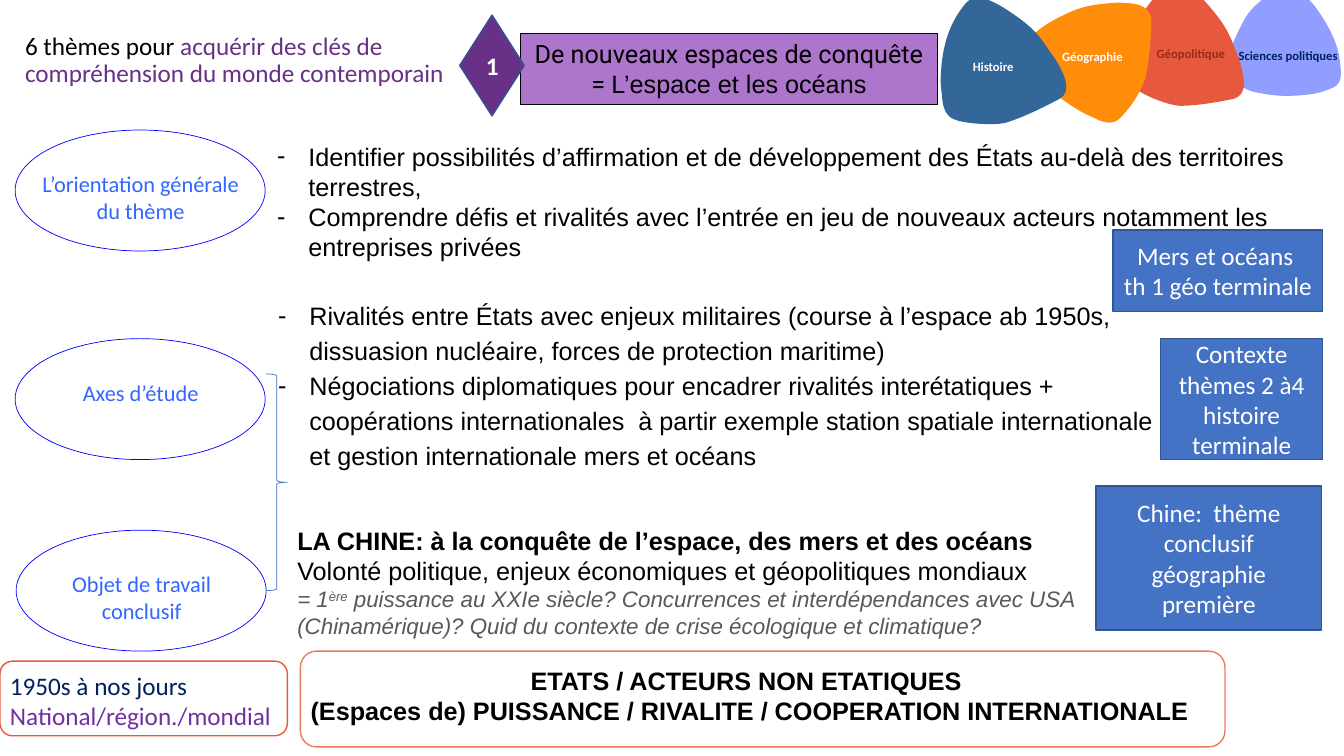
from math import dist

from lxml import etree
from pptx import Presentation
from pptx.dml.color import RGBColor
from pptx.enum import shapes, text
from pptx.oxml import ns
from pptx.util import Inches, Pt

HUES = {
    "black": "000000", "white": "FFFFFF", "gray": "595959", "navy": "002060",
    "plum": "683086", "violet": "7030A0", "mauve": "AE75CD", "lilac": "919DFF",
    "red": "E7593F", "brick": "992918", "coral": "E87C58", "orange": "FF8D09",
    "teal": "336699", "blue": "4472C4", "edge": "325491",
    "pure": "0000FF", "sky": "3366FF",
}

# Subject petals: label, fill, label colour, label box, outline points
PETALS = [
    ("Sciences politiques", "lilac", "navy", (12.22, 0.45, 1.11, 0.11), [
        (13.3, 0.73), (13.28, 0.82), (13.22, 0.87), (13.03, 0.93), (12.71, 0.95),
        (12.43, 0.91), (12.31, 0.86), (12.2, 0.8), (12.14, 0.73), (12.14, 0.65),
        (12.35, 0.18), (12.49, 0.02), (12.67, -0.11), (12.77, -0.14),
        (12.85, -0.11), (12.95, -0.03), (13.04, 0.06), (13.18, 0.28), (13.27, 0.5)]),
    ("Géopolitique", "red", "brick", (11.32, 0.43, 0.98, 0.19), [
        (11.6, -0.16), (11.68, -0.19), (11.76, -0.16), (11.93, -0.01),
        (12.15, 0.27), (12.28, 0.56), (12.32, 0.7), (12.34, 0.84), (12.31, 0.93),
        (12.24, 0.98), (11.73, 1.05), (11.5, 1), (11.29, 0.9), (11.2, 0.82),
        (11.18, 0.73), (11.18, 0.59), (11.21, 0.46), (11.3, 0.2), (11.43, 0)]),
    ("Géographie", "orange", "white", (10.35, 0.46, 0.97, 0.19), [
        (10.19, 0.52), (10.18, 0.43), (10.23, 0.36), (10.4, 0.23), (10.72, 0.08),
        (11.02, 0.03), (11.17, 0.03), (11.3, 0.05), (11.38, 0.1), (11.42, 0.19),
        (11.37, 0.73), (11.28, 0.95), (11.14, 1.14), (11.05, 1.21),
        (10.95, 1.21), (10.83, 1.16), (10.71, 1.1), (10.48, 0.94), (10.31, 0.75)]),
    ("Histoire", "teal", "white", (9.26, 0.55, 1.18, 0.22), [
        (9.58, 0.03), (9.66, -0.02), (9.75, -0.02), (9.96, 0.08), (10.25, 0.3),
        (10.44, 0.55), (10.52, 0.68), (10.57, 0.81), (10.57, 0.91), (10.51, 0.98),
        (10, 1.21), (9.76, 1.23), (9.51, 1.2), (9.41, 1.15), (9.36, 1.06),
        (9.34, 0.92), (9.33, 0.78), (9.36, 0.5), (9.44, 0.25)]),
]

# A paragraph is a list of runs; a run is its text and what differs from the base font
TITLE = [[("6 thèmes pour ", {}),
          ("acquérir des clés de compréhension du monde contemporain", {"hue": "plum"})]]
GOALS = [
    "Identifier possibilités d’affirmation et de développement des États "
    "au-delà des territoires terrestres,",
    "Comprendre défis et rivalités avec l’entrée en jeu de nouveaux acteurs "
    "notamment les entreprises privées"]
AXES = [
    "Rivalités entre États avec enjeux militaires (course à l’espace ab 1950s, "
    "dissuasion nucléaire, forces de protection maritime)",
    "Négociations diplomatiques pour encadrer rivalités interétatiques + "
    "coopérations internationales  à partir exemple station spatiale "
    "internationale et gestion internationale mers et océans"]
THEME = [[("De nouveaux espaces de conquête", {"face": "Roboto"})],
         [("= ", {"face": "Roboto"}), ("L’espace et les océans", {})]]
NOTE = {"size": 16, "hue": "gray", "italic": True}
CHINA = [
    [("LA CHINE: à la conquête de l’espace, des mers et des océans", {"bold": True})],
    "Volonté politique, enjeux économiques et géopolitiques mondiaux",
    [("= 1", NOTE), ("ère", {**NOTE, "sup": True}),
     (" puissance au XXIe siècle? Concurrences et interdépendances avec USA "
      "(Chinamérique)? Quid du contexte de crise écologique et climatique?", NOTE)]]
ACTORS = ["ETATS / ACTEURS NON ETATIQUES ",
          "(Espaces de) PUISSANCE / RIVALITE / COOPERATION INTERNATIONALE"]
SCOPE = ["1950s à nos jours", [("National/région./mondial", {"hue": "violet"})]]

# Ovals: left, top, label, label height
OVALS = [(0.15, 1.29, "L’orientation générale du thème", 0.64),
         (0.15, 3.36, "Axes d’étude", 0.37),
         (0.16, 5.26, "Objet de travail conclusif", 0.64)]
LINKS = [((10.87, 4.82, 2.24, 1.43), ["Chine:  thème conclusif géographie première"]),
         ((11.04, 2.28, 2.08, 0.81), ["Mers et océans ", "th 1 géo terminale"]),
         ((11.51, 3.36, 1.61, 1.2), ["Contexte thèmes 2 à4 histoire terminale"])]

KIND = shapes.MSO_SHAPE
MID = text.MSO_ANCHOR.MIDDLE

deck = Presentation()
deck.slide_width, deck.slide_height = Inches(13.33), Inches(7.5)
slide = deck.slides.add_slide(deck.slide_layouts[6])


def rgb(hue):
    return RGBColor.from_string(HUES[hue])


def style(font, size, hue, face, bold=False, italic=False, sup=False):
    font.size, font.name = Pt(size), face
    font.bold, font.italic = bold, italic
    font.color.rgb = rgb(hue)


def write(shape, paras, size=18, hue="black", face="Calibri", bold=False,
          center=False, anchor=text.MSO_ANCHOR.TOP, space=None, dash=False, inset=None):
    """Fill a shape with paragraphs, each a string or a list of runs."""
    frame = shape.text_frame
    frame.word_wrap, frame.vertical_anchor = True, anchor
    if inset is not None:
        frame.margin_left = frame.margin_right = Inches(inset)
        frame.margin_top = frame.margin_bottom = Inches(inset)
    base = {"size": size, "hue": hue, "face": face, "bold": bold}
    for i, para in enumerate(paras):
        p = frame.paragraphs[0] if i == 0 else frame.add_paragraph()
        p.alignment = text.PP_ALIGN.CENTER if center else text.PP_ALIGN.LEFT
        if space:
            p.line_spacing = space
        if dash:
            props = p._p.get_or_add_pPr()
            props.set("marL", str(Inches(0.31)))
            props.set("indent", str(Inches(-0.31)))
            etree.SubElement(props, ns.qn("a:buFont")).set("typeface", face)
            etree.SubElement(props, ns.qn("a:buChar")).set("char", "-")
        runs = [(para, {})] if isinstance(para, str) else para
        alike = all(extra == runs[0][1] for _, extra in runs)
        if alike:
            style(p.font, **{**base, **runs[0][1]})
        for words, extra in runs:
            run = p.add_run()
            run.text = words
            if not alike:
                style(run.font, **{**base, **extra})
            if extra.get("sup"):
                run._r.get_or_add_rPr().set("baseline", "30000")


def label(box, paras, **look):
    write(slide.shapes.add_textbox(*map(Inches, box)), paras, **look)


def paint(shape, fill=None, line=None, width=1):
    shape.shadow.inherit = False
    if fill:
        shape.fill.solid()
        shape.fill.fore_color.rgb = rgb(fill)
    else:
        shape.fill.background()
    if line:
        shape.line.color.rgb = rgb(line)
        shape.line.width = Pt(width)
    else:
        shape.line.fill.background()
    return shape


def draw(kind, box, **look):
    return paint(slide.shapes.add_shape(kind, *map(Inches, box)), **look)


def bend(shape):
    """Turn the straight sides of a closed outline into smooth cubic curves."""
    tree = shape._element
    dots = [(int(pt.get("x")), int(pt.get("y"))) for pt in tree.iter(ns.qn("a:pt"))][:-1]
    for i, side in enumerate(list(tree.iter(ns.qn("a:lnTo")))):
        a, b, c, d = [dots[(i + k) % len(dots)] for k in (-1, 0, 1, 2)]
        reach = dist(b, c) / 3
        out, back = reach / dist(a, c), reach / dist(b, d)
        grips = [[q + (r - p) * out for p, q, r in zip(a, b, c)],
                 [r - (s - q) * back for q, r, s in zip(b, c, d)], c]
        arc = etree.Element(ns.qn("a:cubicBezTo"))
        for x, y in grips:
            etree.SubElement(arc, ns.qn("a:pt"), x=str(round(x)), y=str(round(y)))
        side.getparent().replace(side, arc)


label((0.15, 0.11, 4.56, 0.99), TITLE, anchor=MID, space=0.9)

for name, fill, ink, box, dots in PETALS:
    first, *rest = [(Inches(x), Inches(y)) for x, y in dots]
    pen = slide.shapes.build_freeform(*first)
    pen.add_line_segments(rest + [first], close=True)
    petal = paint(pen.convert_to_shape(), fill=fill)
    bend(petal)
    label(box, [name], size=9, hue=ink, bold=True, center=True, inset=0.03)

label((2.65, 1.35, 10.28, 1.31), GOALS, face="Arial", dash=True)
label((2.66, 2.89, 9.01, 1.84), AXES, face="Arial", dash=True, space=1.15)

for left, top, name, high in OVALS:
    draw(KIND.OVAL, (left, top, 2.48, 1.2), line="pure", width=0.5)
    label((left + 0.09, top + 0.35, 2.31, high), [name], size=16, hue="sky", center=True)
draw(KIND.RIGHT_BRACE, (2.64, 3.71, 0.21, 2.15), line="blue", width=0.5)

banner = draw(KIND.RECTANGLE, (5.16, 0.33, 4.14, 0.71), fill="mauve", line="black", width=0.75)
write(banner, THEME, face="Arial", center=True)
label((2.85, 5.16, 8.49, 1.55), CHINA, face="Arial")
label((2.79, 6.55, 9.29, 0.71), ACTORS, face="Arial", bold=True, center=True)
label((0, 6.6, 2.85, 0.71), SCOPE, hue="navy")

badge = draw(KIND.DIAMOND, (4.56, 0.15, 0.64, 1), fill="plum", line="edge")
write(badge, ["1"], hue="white", bold=True, center=True, anchor=MID)
draw(KIND.ROUNDED_RECTANGLE, (0, 6.56, 2.85, 0.74), line="red")
draw(KIND.ROUNDED_RECTANGLE, (2.98, 6.46, 9.17, 0.95), line="coral")

for box, words in LINKS:
    card = draw(KIND.RECTANGLE, box, fill="blue", line="edge")
    write(card, words, hue="white", center=True, anchor=MID)

deck.save("out.pptx")
